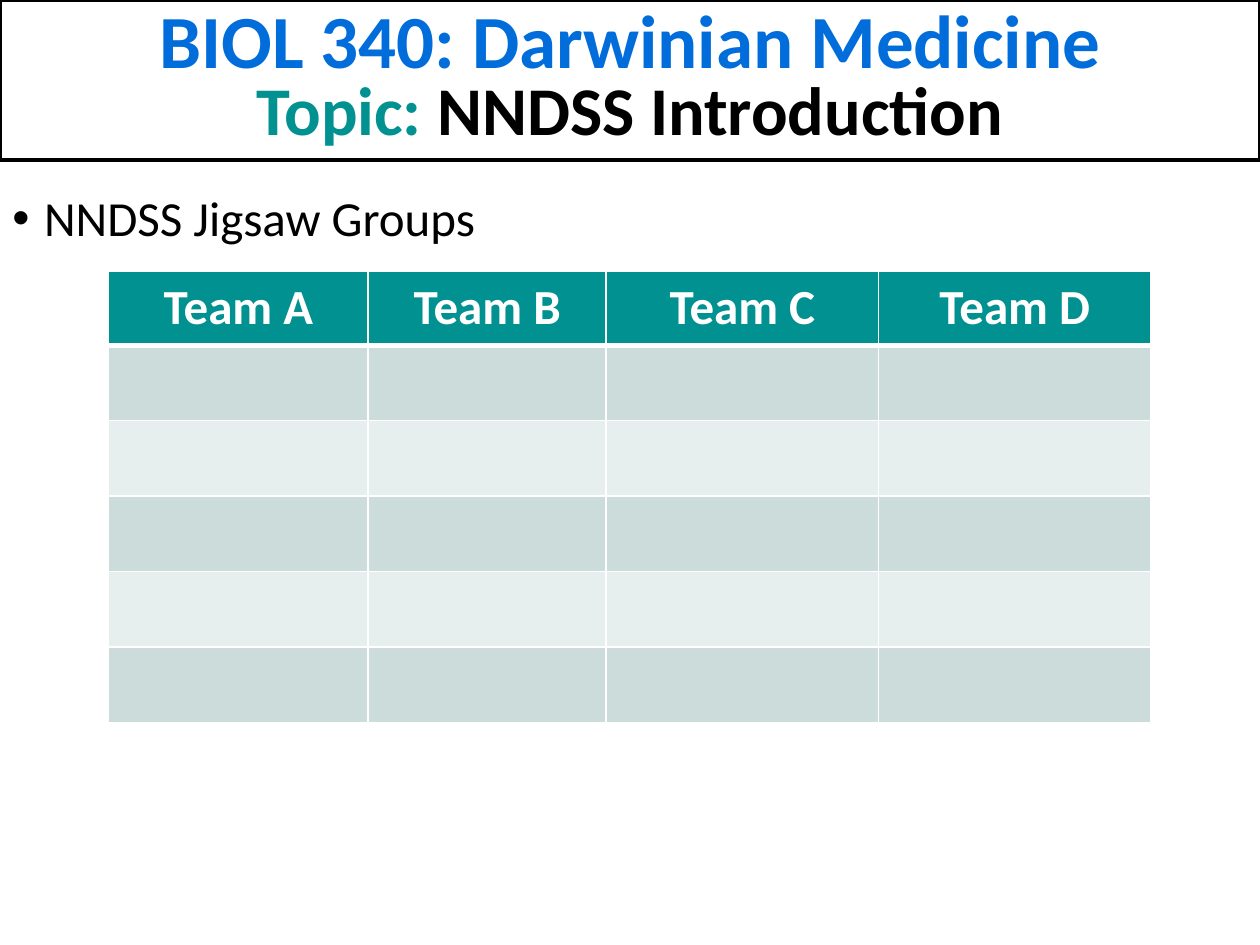
from dataclasses import dataclass

from lxml import etree
from pptx import Presentation
from pptx.dml.color import RGBColor
from pptx.enum.shapes import MSO_SHAPE
from pptx.enum.text import MSO_ANCHOR, PP_ALIGN
from pptx.oxml.ns import qn
from pptx.util import Cm, Pt

RECT = MSO_SHAPE.RECTANGLE
MIDDLE = MSO_ANCHOR.MIDDLE
CENTER, LEFT = PP_ALIGN.CENTER, PP_ALIGN.LEFT


@dataclass(frozen=True)
class Theme:
    font: str = "Calibri"
    blue: str = "006DDB"
    teal: str = "009190"
    black: str = "000000"
    white: str = "FFFFFF"
    bands: tuple = ("CCDCDB", "E7EEEE")
    course: float = 42.9
    topic: float = 39
    body: float = 28


@dataclass(frozen=True)
class Team:
    name: str
    width: float


THEME = Theme()
TEAMS = [Team("Team A", 5.23), Team("Team B", 4.8),
         Team("Team C", 5.49), Team("Team D", 5.49)]
HEAD_ROW, BODY_ROW, BODY_COUNT = 1.5, 1.52, 5


def write(para, text: str, *, size: float, color: str = THEME.black,
          bold: bool = False, align=LEFT) -> None:
    """Add one formatted run to a paragraph."""
    para.alignment = align
    run = para.add_run()
    run.text = text
    font = run.font
    font.name, font.size, font.bold = THEME.font, Pt(size), bold
    font.color.rgb = RGBColor.from_string(color)


def add_bullet(para, indent: float) -> None:
    props = para._p.get_or_add_pPr()
    props.set("marL", str(Cm(indent)))
    props.set("indent", str(-Cm(indent)))
    etree.SubElement(props, qn("a:buFont"), typeface="Arial")
    etree.SubElement(props, qn("a:buChar"), char="•")


def add_edge(cell, side: str, width: float) -> None:
    """Draw a white border on one side; call before filling the cell."""
    props = cell._tc.get_or_add_tcPr()
    line = etree.SubElement(props, qn(f"a:ln{side}"), w=str(Pt(width)))
    fill = etree.SubElement(line, qn("a:solidFill"))
    etree.SubElement(fill, qn("a:srgbClr"), val=THEME.white)


def draw_title(slide, width: int) -> None:
    box = slide.shapes.add_shape(RECT, 0, 0, width, Cm(3.23))
    box.shadow.inherit = False
    box.fill.background()
    box.line.color.rgb = RGBColor.from_string(THEME.black)
    box.line.width = Pt(2.25)
    frame = box.text_frame
    frame.word_wrap = True
    frame.vertical_anchor = MIDDLE
    para = frame.paragraphs[0]
    para.line_spacing = 0.8
    style = {"bold": True, "align": CENTER}
    write(para, "BIOL 340: Darwinian Medicine",
          size=THEME.course, color=THEME.blue, **style)
    para.add_line_break()
    write(para, "Topic: ", size=THEME.topic, color=THEME.teal, **style)
    write(para, "NNDSS Introduction", size=THEME.topic, **style)


def draw_body(slide, width: int) -> None:
    box = slide.shapes.add_textbox(0, Cm(3.78), width, Cm(13.61))
    frame = box.text_frame
    frame.word_wrap = True
    para = frame.paragraphs[0]
    para.line_spacing = 0.9
    para.space_before = Pt(10)
    add_bullet(para, 0.64)
    write(para, "NNDSS Jigsaw Groups", size=THEME.body)


def draw_table(slide, teams: list[Team]) -> None:
    width = sum(team.width for team in teams)
    height = HEAD_ROW + BODY_COUNT * BODY_ROW
    table = slide.shapes.add_table(
        BODY_COUNT + 1, len(teams), Cm(2.19), Cm(5.46),
        Cm(width), Cm(height)).table
    for col, team in zip(table.columns, teams):
        col.width = Cm(team.width)
    for i, row in enumerate(table.rows):
        row.height = Cm(BODY_ROW if i else HEAD_ROW)
        color = THEME.bands[(i - 1) % 2] if i else THEME.teal
        edges = {"L": 1, "R": 1, "T": 3 if i == 1 else 1, "B": 1 if i else 3}
        for cell in row.cells:
            for side, weight in edges.items():
                add_edge(cell, side, weight)
            cell.fill.solid()
            cell.fill.fore_color.rgb = RGBColor.from_string(color)
    for cell, team in zip(table.rows[0].cells, teams):
        cell.vertical_anchor = MIDDLE
        write(cell.text_frame.paragraphs[0], team.name, size=THEME.body,
              color=THEME.white, bold=True, align=CENTER)


def main() -> None:
    deck = Presentation()
    deck.slide_width, deck.slide_height = Cm(25.4), Cm(19.05)
    slide = deck.slides.add_slide(deck.slide_layouts[6])
    draw_title(slide, deck.slide_width)
    draw_body(slide, deck.slide_width)
    draw_table(slide, TEAMS)
    deck.save("out.pptx")


if __name__ == "__main__":
    main()
